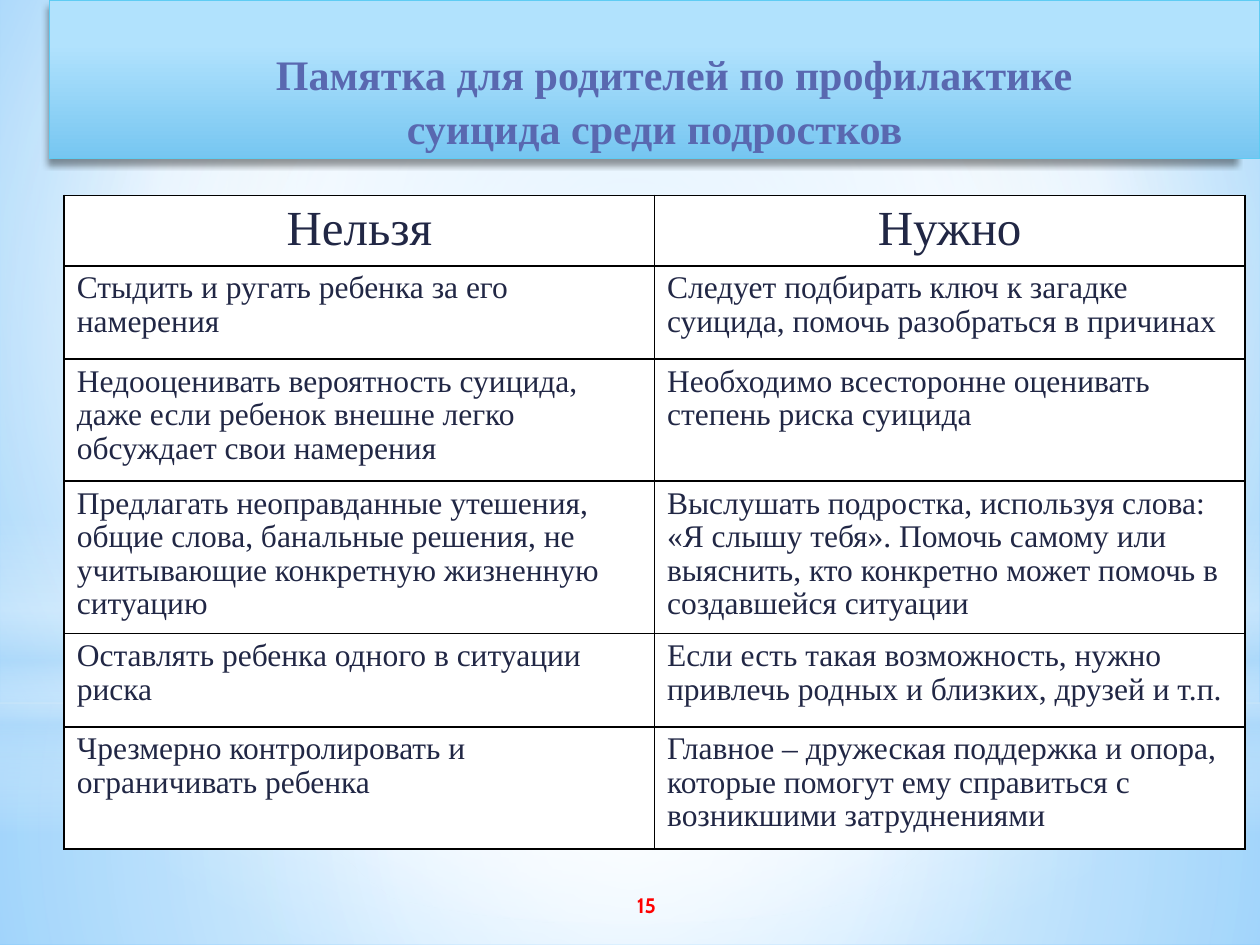
from lxml import etree
from pptx import Presentation
from pptx import util as u
from pptx.dml.color import RGBColor
from pptx.enum import shapes, text
from pptx.oxml import ns, parse_xml

CENTER = (50, 50, 50, 50)
BODY_FONT = "Times New Roman"
ROW_HEIGHTS = [0.56, 0.74, 0.97, 1.21, 0.74, 0.97]
ADVICE = [
    ("Нельзя", "Нужно"),
    ("Стыдить и ругать ребенка за его намерения",
     "Следует подбирать ключ к загадке суицида, помочь разобраться в причинах"),
    ("Недооценивать вероятность суицида, даже если ребенок внешне легко обсуждает свои намерения",
     "Необходимо всесторонне оценивать степень риска суицида"),
    ("Предлагать неоправданные утешения, общие слова, банальные решения, не учитывающие "
     "конкретную жизненную ситуацию",
     "Выслушать подростка, используя слова: «Я слышу тебя». Помочь самому или выяснить, "
     "кто конкретно может помочь в создавшейся ситуации"),
    ("Оставлять ребенка одного в ситуации риска",
     "Если есть такая возможность, нужно привлечь родных и близких, друзей и т.п."),
    ("Чрезмерно контролировать и ограничивать ребенка",
     "Главное – дружеская поддержка и опора, которые помогут ему справиться с "
     "возникшими затруднениями"),
]


def color(value):
    return RGBColor.from_string(value)


def inches(*values):
    return [u.Inches(value) for value in values]


def gradient(stops, angle=None, focus=None):
    """Return a gradFill; stops are (position, colour, opacity) in percent."""
    marks = "".join(
        f'<a:gs pos="{place * 1000}"><a:srgbClr val="{value}">'
        f'<a:alpha val="{opacity * 1000}"/></a:srgbClr></a:gs>'
        for place, value, opacity in stops)
    if focus:
        left, top, right, bottom = (side * 1000 for side in focus)
        course = (f'<a:path path="circle"><a:fillToRect l="{left}" t="{top}" '
                  f'r="{right}" b="{bottom}"/></a:path>')
    else:
        course = f'<a:lin ang="{angle * 60000}" scaled="0"/>'
    return parse_xml(f'<a:gradFill {ns.nsdecls("a")} rotWithShape="1">'
                     f'<a:gsLst>{marks}</a:gsLst>{course}</a:gradFill>')


def apply_gradient(owner, element, **options):
    """Swap the solid fill of a shape or background for a gradient."""
    owner.fill.solid()
    solid = next(element.iter(ns.qn("a:solidFill")))
    solid.getparent().replace(solid, gradient(**options))


def write(frame, words, size=18, font=BODY_FONT, ink="212745", bold=False,
          align=text.PP_ALIGN.LEFT, spacing=1.0, first_indent=0):
    frame.word_wrap = True
    para = frame.paragraphs[0]
    para.alignment, para.line_spacing = align, spacing
    if first_indent:
        properties = para._p.get_or_add_pPr()
        properties.set("marL", "0")
        properties.set("indent", str(u.Inches(first_indent)))
    for number, line in enumerate(words.split("\n")):
        if number:
            para.add_line_break()
        span = para.add_run()
        span.text = line
        span.font.size, span.font.name, span.font.bold = u.Pt(size), font, bold
        span.font.color.rgb = color(ink)


class Page:
    def __init__(self, deck):
        self.slide = deck.slides.add_slide(deck.slide_layouts[5])

    def background(self, **options):
        apply_gradient(self.slide.background, self.slide._element, **options)

    def glow(self, kind, place, **options):
        shape = self.slide.shapes.add_shape(kind, *inches(*place))
        shape.shadow.inherit = False
        shape.line.fill.background()
        apply_gradient(shape, shape._element.spPr, **options)

    def title(self, place, words, line_color, **options):
        title = self.slide.shapes.title
        title.left, title.top, title.width, title.height = inches(*place)
        apply_gradient(title, title._element.spPr, **options)
        title.line.color.rgb = color(line_color)
        title.line.width = u.Pt(0.75)
        title._element.spPr.append(parse_xml(
            f'<a:effectLst {ns.nsdecls("a")}><a:outerShdw blurRad="50800" dist="50800" '
            'dir="5400000" sx="98000" sy="98000" algn="ctr" rotWithShape="0">'
            '<a:srgbClr val="000000"><a:alpha val="40000"/></a:srgbClr>'
            '</a:outerShdw></a:effectLst>'))
        title.text_frame.vertical_anchor = text.MSO_ANCHOR.BOTTOM
        write(title.text_frame, words, size=24, ink="5968B0", bold=True,
              align=text.PP_ALIGN.CENTER, spacing=1.07, first_indent=0.31)
        self.slide.shapes._spTree.append(title._element)

    def table(self, left, top, width, heights, rows):
        columns = len(rows[0])
        frame = self.slide.shapes.add_table(
            len(rows), columns, *inches(left, top, width, sum(heights)))
        table = frame.table
        table.first_row = table.horz_banding = False
        for column in table.columns:
            column.width = u.Inches(width / columns)
        for number, (height, row) in enumerate(zip(heights, rows)):
            table.rows[number].height = u.Inches(height)
            for column, words in enumerate(row):
                cell = table.cell(number, column)
                cell.fill.solid()
                cell.fill.fore_color.rgb = color("FFFFFF")
                self.borders(cell)
                if number == 0:
                    write(cell.text_frame, words, size=28, align=text.PP_ALIGN.CENTER)
                else:
                    write(cell.text_frame, words, spacing=0.96)

    def borders(self, cell):
        properties = cell._tc.get_or_add_tcPr()
        for index, side in enumerate(("lnL", "lnR", "lnT", "lnB")):
            line = etree.Element(ns.qn(f"a:{side}"), w=str(u.Pt(1)))
            fill = etree.SubElement(line, ns.qn("a:solidFill"))
            etree.SubElement(fill, ns.qn("a:srgbClr"), val="000000")
            properties.insert(index, line)

    def label(self, place, words, **options):
        box = self.slide.shapes.add_textbox(*inches(*place))
        box.text_frame.vertical_anchor = text.MSO_ANCHOR.MIDDLE
        write(box.text_frame, words, **options)


def main():
    deck = Presentation()
    deck.slide_width, deck.slide_height = inches(10, 7.5)
    page = Page(deck)
    rectangle, oval = shapes.MSO_SHAPE.RECTANGLE, shapes.MSO_SHAPE.OVAL

    page.background(focus=(20, 10, 20, 60), stops=[
        (0, "9ED5FF", 100), (60, "FFFFFF", 100), (100, "5BB9FF", 100)])
    page.glow(rectangle, (0, 5.58, 10, 1.92), focus=CENTER, stops=[
        (0, "FFFFFF", 91), (37, "FFFFFF", 76), (100, "B4DCFA", 79)])
    page.glow(rectangle, (0, 0, 10, 5.58), focus=CENTER, stops=[
        (0, "FFFFFF", 89), (48, "FFFFFF", 62), (100, "B4DCFA", 79)])
    page.glow(rectangle, (0, 4.12, 10, 2.5), angle=90, stops=[
        (0, "FFFFFF", 0), (29, "FFFFFF", 30), (45, "B4DCFA", 40),
        (55, "FFFFFF", 26), (65, "B4DCFA", 60), (100, "FFFFFF", 0)])
    page.glow(oval, (0, 1.75, 10, 5.58), focus=CENTER, stops=[
        (0, "FFFFFF", 100), (56, "FFFFFF", 0)])

    page.title((0.39, 0, 9.61, 1.26),
               "Памятка для родителей по профилактике\nсуицида среди подростков",
               line_color="5ECCF3", angle=90,
               stops=[(28, "B1E2FD", 100), (100, "76C6F1", 100)])
    page.table(0.51, 1.55, 9.37, ROW_HEIGHTS, ADVICE)
    page.label((4.13, 6.98, 2, 0.4), "15", size=12, font="Cabin", ink="FF0000",
               bold=True, align=text.PP_ALIGN.CENTER)
    deck.save("out.pptx")


if __name__ == "__main__":
    main()
